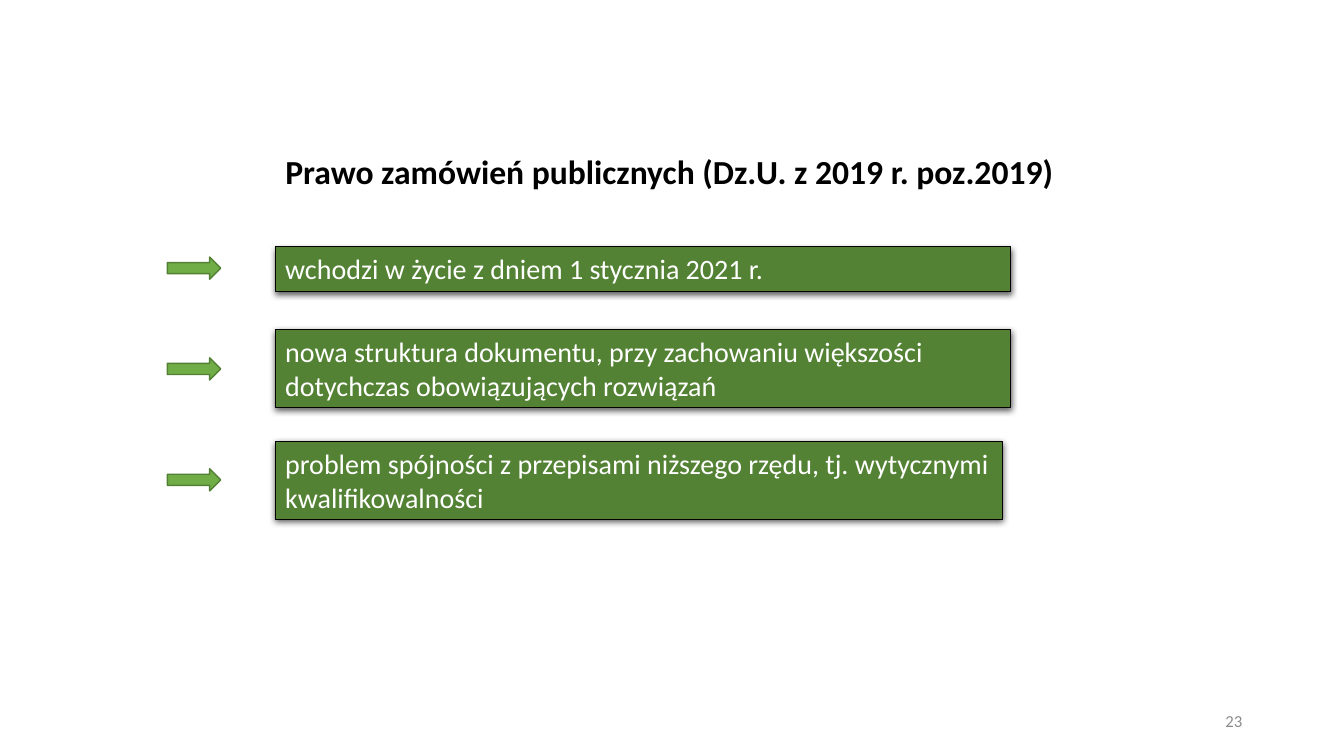
from lxml import etree
from pptx import Presentation
from pptx.dml.color import RGBColor
from pptx.enum.shapes import MSO_SHAPE as Shape
from pptx.enum.text import MSO_ANCHOR as Anchor, MSO_AUTO_SIZE as AutoSize, PP_ALIGN as Align
from pptx.oxml.ns import qn
from pptx.util import Inches, Pt

FONT = "Calibri"
BLACK = RGBColor(0x00, 0x00, 0x00)
WHITE = RGBColor(0xFF, 0xFF, 0xFF)
GREY = RGBColor(0x8C, 0x8C, 0x8C)
DARK_GREEN = RGBColor(0x54, 0x82, 0x35)
GREEN = RGBColor(0x70, 0xAD, 0x47)
GREEN_EDGE = RGBColor(0x53, 0x80, 0x35)

BOX_LEFT = 2.73
ARROW_LEFT, ARROW_WIDTH, ARROW_HEIGHT = 1.66, 0.53, 0.22

# Text, box top, box width, box height, arrow top
POINTS = [
    ("wchodzi w życie z dniem 1 stycznia 2021 r.", 2.45, 7.29, 0.44, 2.55),
    ("nowa struktura dokumentu, przy zachowaniu większości "
     "dotychczas obowiązujących rozwiązań", 3.27, 7.29, 0.77, 3.55),
    ("problem spójności z przepisami niższego rzędu, tj. wytycznymi "
     "kwalifikowalności", 4.38, 7.21, 0.77, 4.65),
]


def write(frame, text, size, color, bold=False, align=Align.LEFT, anchor=Anchor.TOP):
    frame.word_wrap = True
    frame.auto_size = AutoSize.NONE
    frame.vertical_anchor = anchor
    paragraph = frame.paragraphs[0]
    paragraph.alignment = align
    run = paragraph.add_run()
    run.text = text
    run.font.name = FONT
    run.font.size = Pt(size)
    run.font.bold = bold
    run.font.color.rgb = color


def add_filled(slide, kind, left, top, width, height, fill, edge, edge_width):
    filled = slide.shapes.add_shape(
        kind, Inches(left), Inches(top), Inches(width), Inches(height))
    filled.shadow.inherit = False
    filled.fill.solid()
    filled.fill.fore_color.rgb = fill
    filled.line.color.rgb = edge
    filled.line.width = Pt(edge_width)
    return filled


def add_soft_shadow(box):
    effects = box._element.spPr.find(qn("a:effectLst"))
    shadow = etree.SubElement(
        effects, qn("a:outerShdw"), blurRad=str(Pt(4.5)), dist=str(Pt(1.5)),
        dir="5400000", algn="ctr", rotWithShape="0")
    color = etree.SubElement(shadow, qn("a:srgbClr"), val=str(BLACK))
    etree.SubElement(color, qn("a:alpha"), val="63000")


def add_title(slide, text):
    title = slide.shapes.title
    title.left, title.top = Inches(BOX_LEFT), Inches(1.45)
    title.width, title.height = Inches(8.41), Inches(0.5)
    write(title.text_frame, text, 24, BLACK, bold=True)


def add_point(slide, text, top, width, height, arrow_top):
    box = add_filled(slide, Shape.RECTANGLE, BOX_LEFT, top, width, height,
                     DARK_GREEN, BLACK, 0.75)
    add_soft_shadow(box)
    write(box.text_frame, text, 20, WHITE)
    add_filled(slide, Shape.RIGHT_ARROW, ARROW_LEFT, arrow_top, ARROW_WIDTH,
               ARROW_HEIGHT, GREEN, GREEN_EDGE, 1)


def add_page_number(slide, number):
    page = slide.shapes.add_textbox(Inches(9.42), Inches(6.95), Inches(3), Inches(0.4))
    write(page.text_frame, number, 12, GREY, align=Align.RIGHT, anchor=Anchor.MIDDLE)


def main():
    deck = Presentation()
    deck.slide_width, deck.slide_height = Inches(13.33), Inches(7.5)
    slide = deck.slides.add_slide(deck.slide_layouts.get_by_name("Title Only"))

    # Heading
    add_title(slide, "Prawo zamówień publicznych (Dz.U. z 2019 r. poz.2019)")

    # Points with their arrows
    for point in POINTS:
        add_point(slide, *point)

    # Footer
    add_page_number(slide, "23")
    deck.save("out.pptx")


if __name__ == "__main__":
    main()
